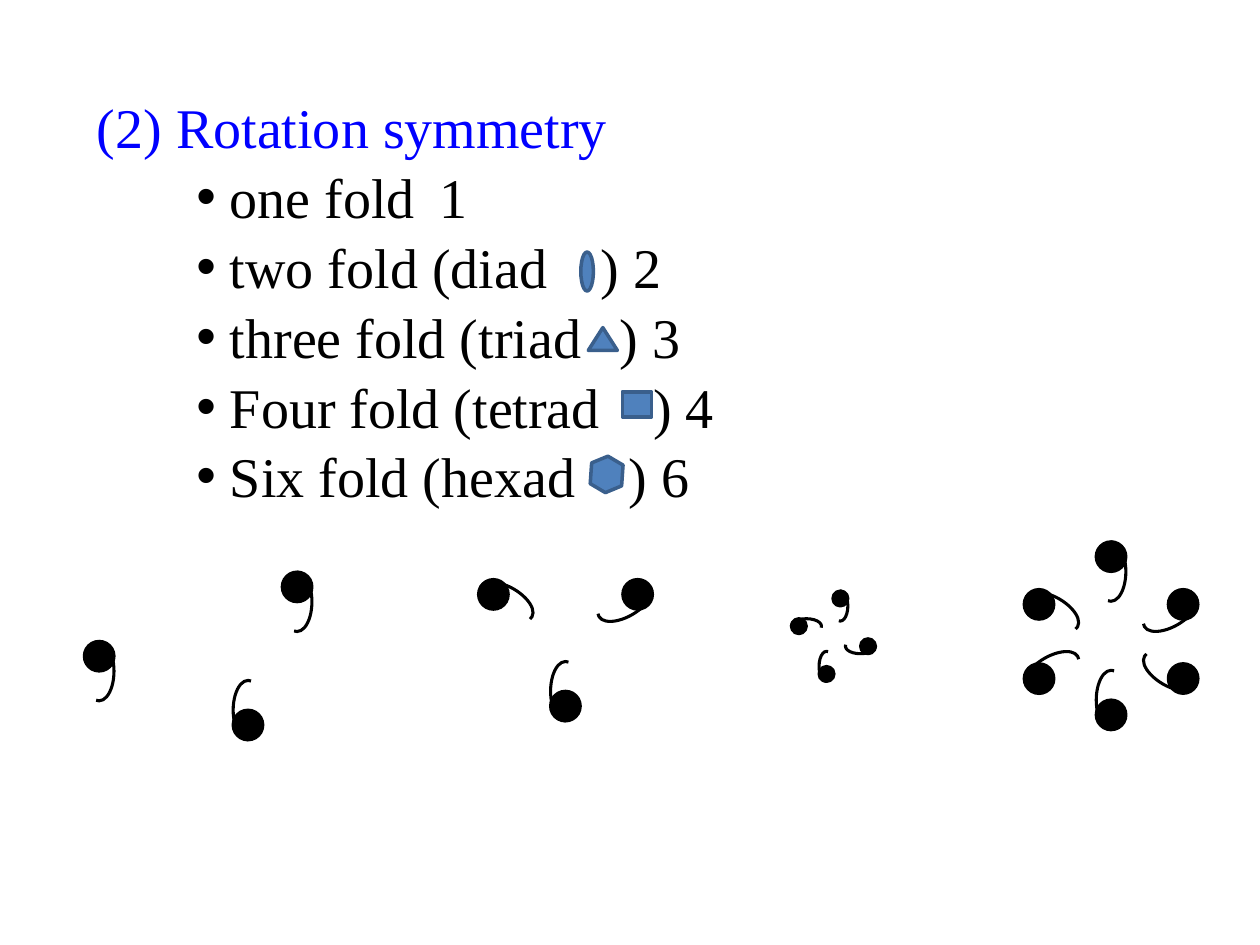
from dataclasses import dataclass
from lxml.etree import SubElement
from pptx import Presentation
from pptx.dml.color import RGBColor
from pptx.enum.shapes import MSO_SHAPE
from pptx.enum.text import MSO_ANCHOR, MSO_AUTO_SIZE, PP_ALIGN
from pptx.oxml.ns import qn
from pptx.util import Pt


@dataclass(frozen=True)
class Theme:
    font: str = "Times New Roman"
    size: float = 32
    head: str = "0000FF"
    ink: str = "000000"
    fill: str = "4F81BD"
    edge: str = "3A5F8C"


theme = Theme()


def style(frame, color):
    frame.word_wrap = False
    for para in frame.paragraphs:
        para.alignment = PP_ALIGN.LEFT
        for run in para.runs:
            run.font.name = theme.font
            run.font.size = Pt(theme.size)
            run.font.color.rgb = RGBColor.from_string(color)


def draw(shapes, kind, box, fill, edge, width):
    """Add a preset shape; a fill of None leaves it hollow."""
    shape = shapes.add_shape(kind, *map(Pt, box))
    shape.shadow.inherit = False
    if fill:
        shape.fill.solid()
        shape.fill.fore_color.rgb = RGBColor.from_string(fill)
    else:
        shape.fill.background()
    shape.line.color.rgb = RGBColor.from_string(edge)
    shape.line.width = Pt(width)
    return shape


deck = Presentation()
deck.slide_width, deck.slide_height = Pt(720), Pt(540)
slide = deck.slides.add_slide(deck.slide_layouts[5])

# Title
title = slide.shapes.title
title.left, title.top, title.width, title.height = map(Pt, (48.2, 49, 309, 46))
title.text_frame.text = "(2) Rotation symmetry"
title.text_frame.vertical_anchor = MSO_ANCHOR.TOP
title.text_frame.auto_size = MSO_AUTO_SIZE.SHAPE_TO_FIT_TEXT
style(title.text_frame, theme.head)

# List of folds: text and the tab stop that leaves room for the symbol
folds = [
    (" one fold\t1", 139),
    (" two fold (diad\t) 2", 231),
    (" three fold (triad\t) 3", 242),
    (" Four fold (tetrad\t) 4", 261),
    (" Six fold (hexad\t) 6", 247),
]
frame = slide.shapes.add_textbox(Pt(105.1), Pt(91.4), Pt(314.6), Pt(201)).text_frame
frame.vertical_anchor = MSO_ANCHOR.MIDDLE
frame.text = "\n".join(text for text, stop in folds)
style(frame, theme.ink)
for para, (text, stop) in zip(frame.paragraphs, folds):
    para.space_before = Pt(1.5)
    props = para._p.get_or_add_pPr()
    props.set("marL", "0")
    props.set("indent", "0")
    SubElement(props, qn("a:buFont"), typeface="Arial")
    SubElement(props, qn("a:buChar"), char="•")
    tabs = SubElement(props, qn("a:tabLst"))
    SubElement(tabs, qn("a:tab"), pos=str(Pt(stop)), algn="l")

# Axis symbols: kind, box, turn
signs = [
    (MSO_SHAPE.OVAL, (331.9, 144, 7.2, 22.3), 0),
    (MSO_SHAPE.ISOSCELES_TRIANGLE, (336.2, 187.2, 16.6, 13), 0),
    (MSO_SHAPE.RECTANGLE, (355.7, 223.9, 16.6, 14.4), 0),
    (MSO_SHAPE.HEXAGON, (336.2, 262.1, 20.9, 18), 94),
]
for kind, box, turn in signs:
    draw(slide.shapes, kind, box, theme.fill, theme.edge, 2).rotation = turn

# Commas around each axis: dot size, then left, top and turn of each comma
motifs = [
    (17, [(48.2, 366.5, 0)]),
    (17, [(161.3, 326.9, 0), (133.2, 388.8, 180)]),
    (17, [(348.5, 326.9, 60), (314.6, 378, 180), (280.8, 326.9, 300)]),
    (8.6, [(475.9, 337.7, 0), (487.4, 360.7, 90),
           (468, 372.2, 180), (456.5, 349.2, 270)]),
    (17, [(626.4, 309.6, 0), (660.2, 332.6, 60), (660.2, 366.5, 120),
          (626.4, 383, 180), (592.6, 366.5, 240), (592.6, 332.6, 300)]),
]
for size, marks in motifs:
    for left, top, turn in marks:
        comma = slide.shapes.add_group_shape()
        draw(comma.shapes, MSO_SHAPE.OVAL, (left, top, size, size),
             theme.ink, theme.ink, 1.75)
        tail = draw(comma.shapes, MSO_SHAPE.ARC, (left, top, size, 2 * size),
                    None, theme.ink, 1.75)
        tail.adjustments[0], tail.adjustments[1] = 162, 57.48
        comma.rotation = turn

deck.save("out.pptx")
